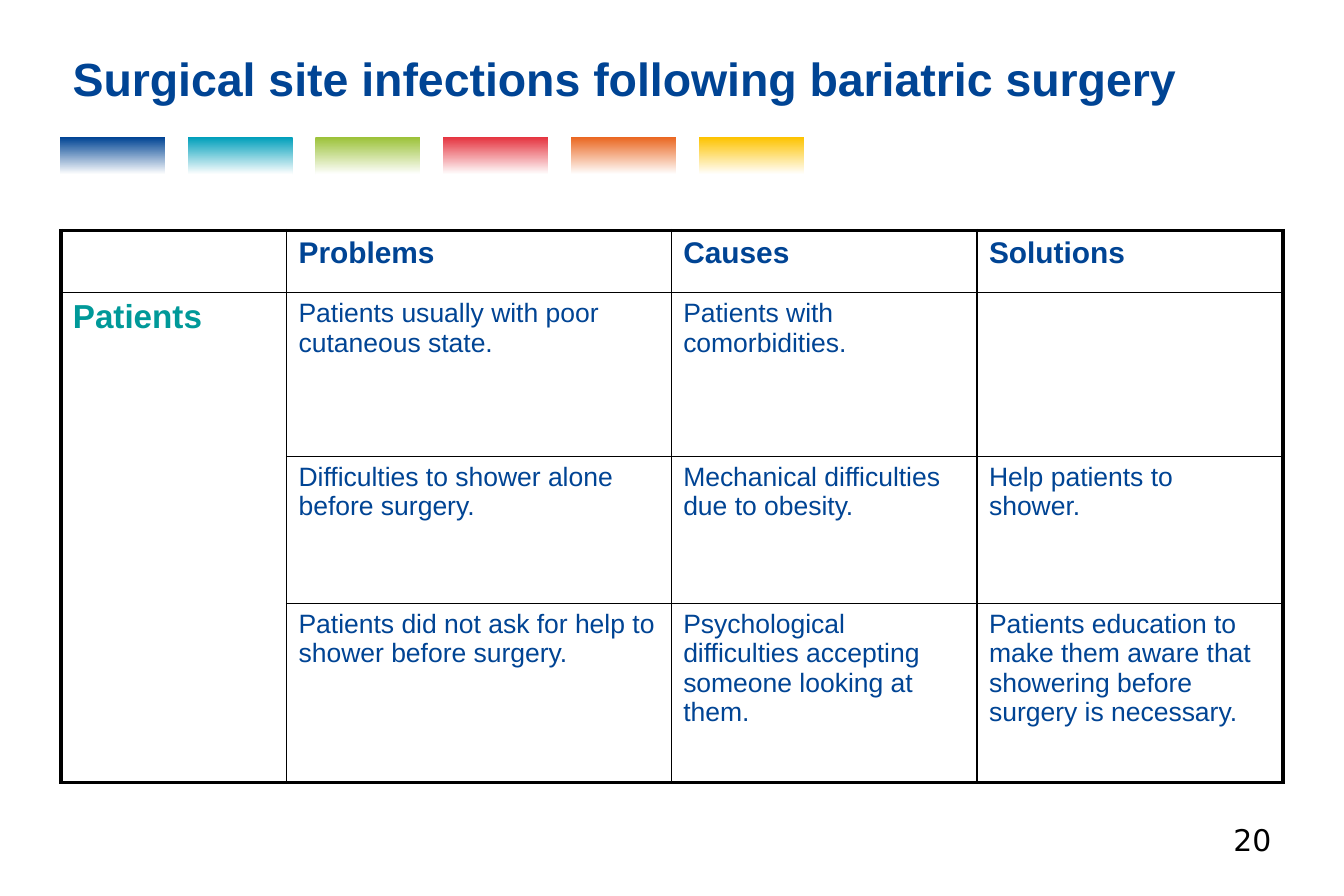
from pptx import Presentation
from pptx.dml.color import RGBColor as RGB
from pptx.enum.shapes import MSO_SHAPE as Kind
from pptx.enum.text import MSO_ANCHOR as Anchor, PP_ALIGN as Align
from pptx.oxml import parse_xml
from pptx.oxml.ns import nsdecls
from pptx.util import Pt

PX = 9144
NAVY = "004494"
TEAL = "009999"


def color(code):
    return RGB.from_string(code)


def write(frame, text, size, tint, bold=False, face="Arial"):
    frame.word_wrap = True
    line = frame.paragraphs[0]
    line.text = text
    line.font.size = Pt(size)
    line.font.name = face
    line.font.bold = bold
    line.font.color.rgb = color(tint)
    return line


deck = Presentation()
deck.slide_width = 1125 * PX
deck.slide_height = 750 * PX
slide = deck.slides.add_slide(deck.slide_layouts[6])
shapes = slide.shapes

tints = [NAVY, "009FBB", "9CC239", "E53540", "EA6721", "FDC300"]
for i, tint in enumerate(tints):
    bar = shapes.add_shape(Kind.RECTANGLE, (50 + 107 * i) * PX, 115 * PX, 88 * PX, 31 * PX)
    bar.shadow.inherit = False
    bar.line.fill.background()
    bar.fill.gradient()
    bar.fill.gradient_angle = 270
    for n, (stop, shade) in enumerate(zip(bar.fill.gradient_stops, [tint, "FFFFFF"])):
        stop.position = n
        stop.color.rgb = color(shade)

title = shapes.add_textbox(51 * PX, 23 * PX, 1047 * PX, 85 * PX).text_frame
title.vertical_anchor = Anchor.MIDDLE
write(title, "Surgical site infections following bariatric surgery", 28, NAVY, True)

rows = [
    ["", "Problems", "Causes", "Solutions"],
    ["Patients", "Patients usually with poor cutaneous state.",
     "Patients with comorbidities.", ""],
    ["", "Difficulties to shower alone before surgery.",
     "Mechanical difficulties due to obesity.", "Help patients to shower."],
    ["", "Patients did not ask for help to shower before surgery.",
     "Psychological difficulties accepting someone looking at them.",
     "Patients education to make them aware that showering before surgery is necessary."],
]
widths = [189, 322, 256, 256]
heights = [52, 137, 123, 150]
table = shapes.add_table(4, 4, 51 * PX, 193 * PX, sum(widths) * PX, sum(heights) * PX).table
table.first_row = False
table.horz_banding = False
for col, width in zip(table.columns, widths):
    col.width = width * PX
for row, height in zip(table.rows, heights):
    row.height = height * PX
table.cell(1, 0).merge(table.cell(3, 0))

for r, row in enumerate(rows):
    for c, text in enumerate(row):
        cell = table.cell(r, c)
        edges = {"L": c == 0, "R": c == 3, "T": r == 0, "B": r == 3 or (c == 0 and r > 0)}
        for side, outer in edges.items():
            weight = Pt(2.25 if outer else 1)
            cell._tc.get_or_add_tcPr().append(parse_xml(
                f'<a:ln{side} {nsdecls("a")} w="{weight}"><a:solidFill>'
                f'<a:srgbClr val="000000"/></a:solidFill></a:ln{side}>'))
        cell.fill.background()
        if text:
            head = r == 0 or c == 0
            size = 18 if r == 0 else 20 if c == 0 else 16
            write(cell.text_frame, text, size, TEAL if c == 0 else NAVY, head)

page = shapes.add_textbox(859 * PX, 683 * PX, 215 * PX, 50 * PX).text_frame
write(page, "20", 18, "000000", face="DejaVu Sans").alignment = Align.RIGHT

deck.save("out.pptx")
